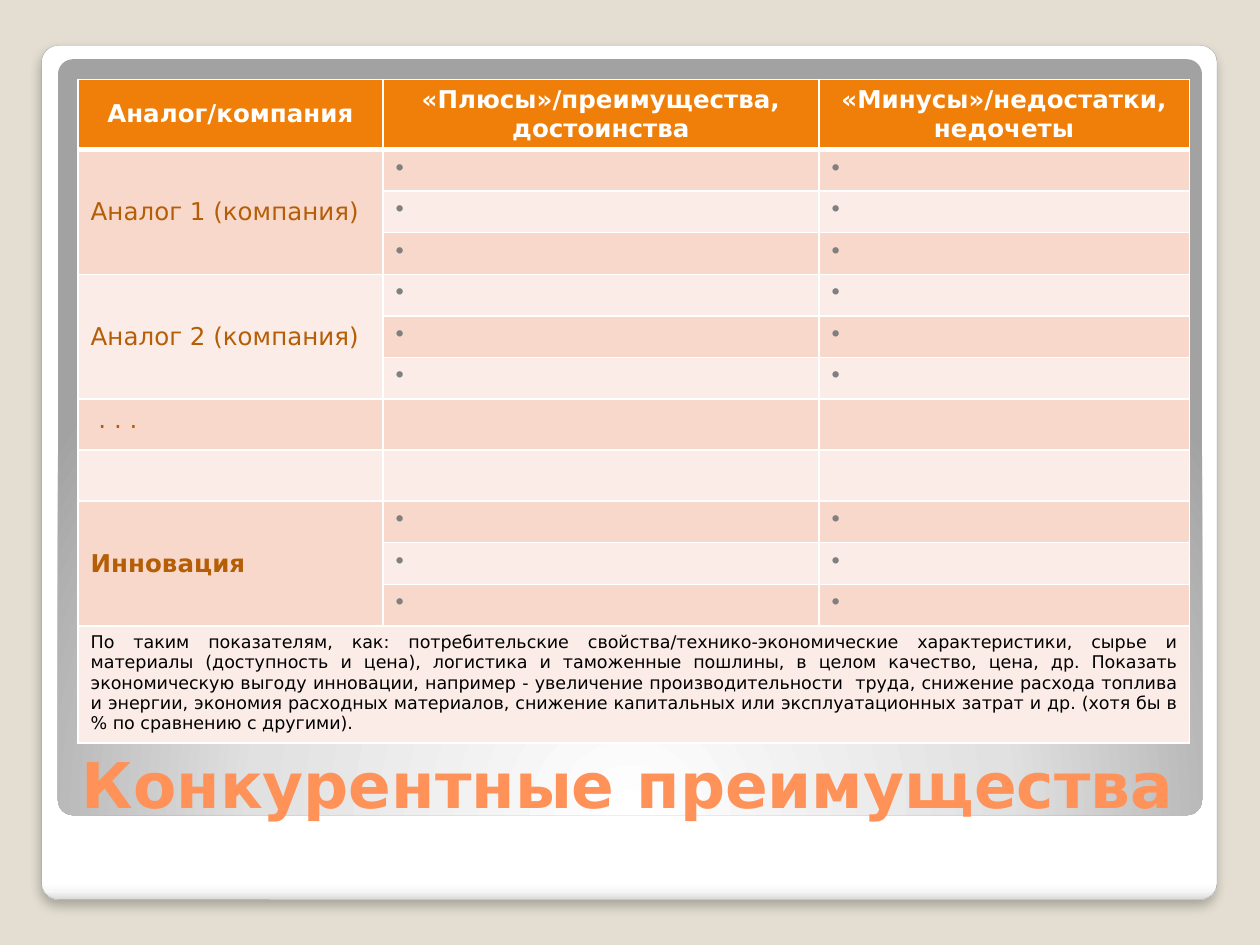
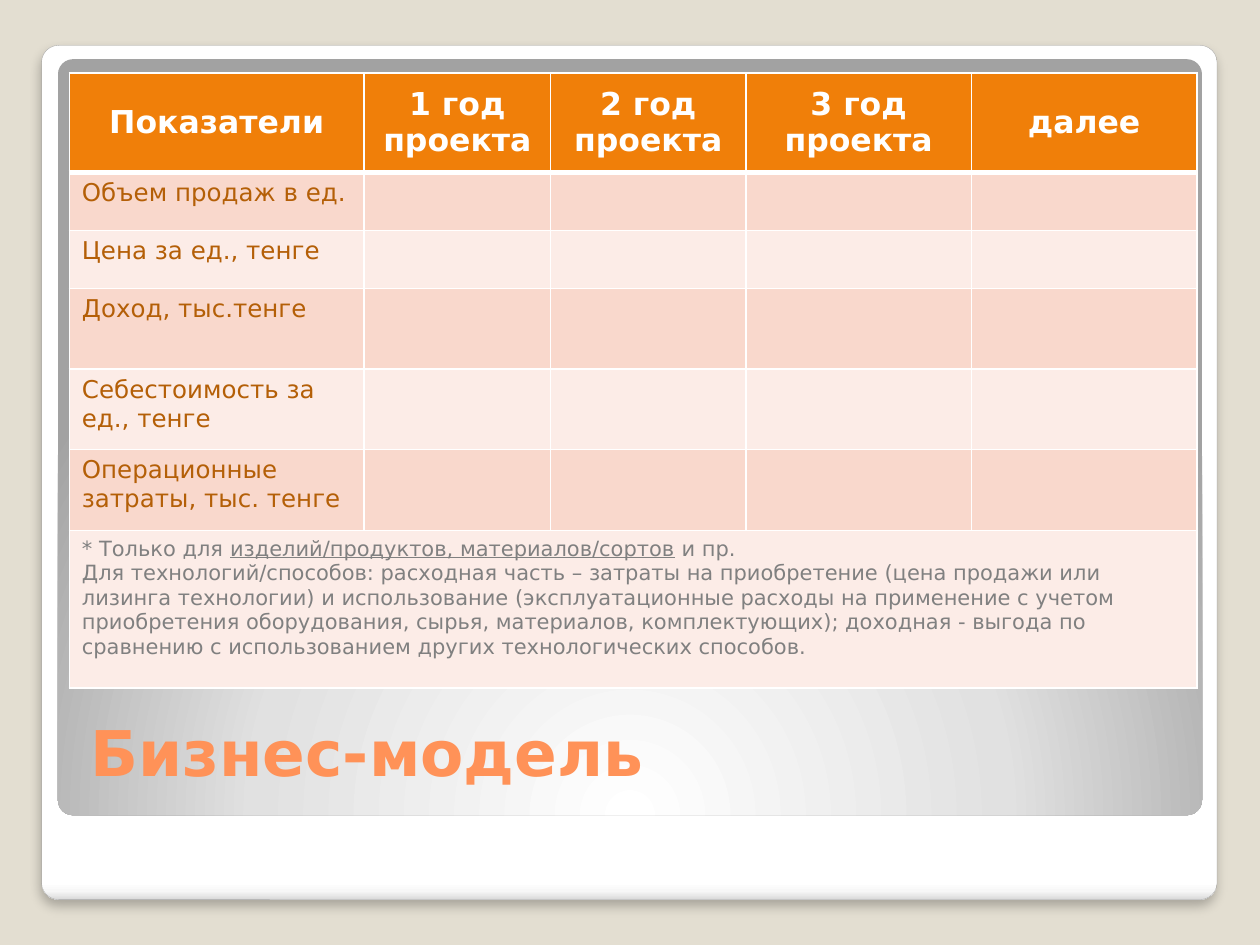
from lxml import etree
from pptx import Presentation
from pptx.dml.color import RGBColor
from pptx.enum.shapes import MSO_SHAPE
from pptx.enum.text import MSO_ANCHOR, MSO_AUTO_SIZE, PP_ALIGN
from pptx.oxml import parse_xml
from pptx.oxml.ns import nsdecls, qn
from pptx.util import Inches, Pt

ROUNDED = MSO_SHAPE.ROUNDED_RECTANGLE
TOP, MIDDLE, BOTTOM = MSO_ANCHOR.TOP, MSO_ANCHOR.MIDDLE, MSO_ANCHOR.BOTTOM
LEFT, CENTER, JUSTIFY = PP_ALIGN.LEFT, PP_ALIGN.CENTER, PP_ALIGN.JUSTIFY
NO_AUTOFIT = MSO_AUTO_SIZE.NONE

FONT = "DejaVu Sans"
WHITE = RGBColor(0xFF, 0xFF, 0xFF)
BLACK = RGBColor(0x00, 0x00, 0x00)
GRAY = RGBColor(0x80, 0x80, 0x80)
BEIGE = RGBColor(0xE3, 0xDE, 0xD1)
EDGE = RGBColor(0xA4, 0xA4, 0xA4)
TITLE_ORANGE = RGBColor(0xFF, 0x92, 0x58)
HEADER_ORANGE = RGBColor(0xF0, 0x7F, 0x09)
LABEL_BROWN = RGBColor(0xB4, 0x5F, 0x07)
BANDS = RGBColor(0xF9, 0xD8, 0xCC), RGBColor(0xFC, 0xEC, 0xE7)

CARD_STOPS = [(0, WHITE), (98, WHITE), (99, RGBColor(0xF7, 0xF7, 0xF7)),
              (100, RGBColor(0xDA, 0xDA, 0xDA))]
PANEL_STOPS = [(0, WHITE), (55, RGBColor(0xE1, 0xE1, 0xE1)),
               (100, RGBColor(0xA2, 0xA2, 0xA2))]
DOWNWARD = '<a:lin ang="5400000" scaled="0"/>'
FROM_BELOW = ('<a:path path="circle"><a:fillToRect l="50000" t="175000" '
              'r="50000" b="-75000"/></a:path>')

COMPETITORS = ["Аналог 1 (компания)", "Аналог 2 (компания)"]
INNOVATION = "Инновация"
COMPARISON_NOTE = (
    "По таким показателям, как: потребительские свойства/технико-экономические "
    "характеристики, сырье и материалы (доступность и цена), логистика и таможенные "
    "пошлины, в целом качество, цена, др. Показать экономическую выгоду инновации, "
    "например - увеличение производительности  труда, снижение расхода топлива и "
    "энергии, экономия расходных материалов, снижение капитальных или "
    "эксплуатационных затрат и др. (хотя бы в % по сравнению с другими).")
INDICATORS = ["Объем продаж в ед.", "Цена за ед., тенге", "Доход, тыс.тенге",
              "Себестоимость за ед., тенге", "Операционные затраты, тыс. тенге"]
MODEL_NOTE = [
    "* Только для ",
    "изделий/продуктов, материалов/сортов",
    " и пр.",
    "Для технологий/способов: расходная часть – затраты на приобретение (цена продажи "
    "или лизинга технологии) и использование (эксплуатационные расходы на применение с "
    "учетом приобретения оборудования, сырья, материалов, комплектующих); доходная - "
    "выгода по сравнению с использованием других технологических способов."]


def style_run(r, size, color, bold=False):
    r.font.name, r.font.size, r.font.bold = FONT, Pt(size), bold
    r.font.color.rgb = color


def add_rounded(slide, box, stops, direction):
    """Rounded rectangle with a gradient fill and no line or shadow."""
    sp = slide.shapes.add_shape(ROUNDED, *map(Inches, box))
    sp.adjustments[0] = 0.02
    sp.shadow.inherit = False
    sp.line.fill.background()
    sp.fill.background()
    gs = "".join(f'<a:gs pos="{pos * 1000}"><a:srgbClr val="{color}"/></a:gs>'
                 for pos, color in stops)
    gradient = parse_xml(f'<a:gradFill {nsdecls("a")} rotWithShape="1">'
                         f'<a:gsLst>{gs}</a:gsLst>{direction}</a:gradFill>')
    props = sp.element.spPr
    props.replace(props.find(qn("a:noFill")), gradient)
    return sp


def add_shared_frame(prs, layout, slide):
    """Give the layout the background, the white card and the gray panel."""
    fill = prs.slide_master.background.fill
    fill.solid()
    fill.fore_color.rgb = BEIGE
    card = add_rounded(slide, (0.33, 0.36, 9.33, 6.78), CARD_STOPS, DOWNWARD)
    card.line.color.rgb = EDGE
    card.line.width = Pt(0.16)
    card.element.spPr.find(qn("a:effectLst")).append(parse_xml(
        f'<a:outerShdw {nsdecls("a")} blurRad="{Pt(6)}" dist="{Pt(4)}" dir="5400000" '
        'algn="t" rotWithShape="0"><a:srgbClr val="000000"><a:alpha val="25000"/>'
        '</a:srgbClr></a:outerShdw>'))
    panel = add_rounded(slide, (0.46, 0.47, 9.08, 6), PANEL_STOPS, FROM_BELOW)
    for position, sp in enumerate((card, panel), start=2):
        layout.shapes.element.insert(position, sp.element)


def set_title(slide, text, box):
    title = slide.shapes.title
    title.left, title.top, title.width, title.height = map(Inches, box)
    tf = title.text_frame
    tf.text = text
    tf.auto_size = NO_AUTOFIT
    tf.vertical_anchor = BOTTOM
    p = tf.paragraphs[0]
    p.alignment = LEFT
    style_run(p.runs[0], 36, TITLE_ORANGE, bold=True)


def set_border(cell, **widths):
    """White lines in points on the sides L, R, T and B, 1 pt unless given."""
    props = cell._tc.get_or_add_tcPr()
    for i, side in enumerate("LRTB"):
        ln = etree.Element(qn(f"a:ln{side}"), w=str(Pt(widths.get(side, 1))))
        solid = etree.SubElement(ln, qn("a:solidFill"))
        etree.SubElement(solid, qn("a:srgbClr"), val=str(WHITE))
        props.insert(i, ln)


def write_cell(cell, text, size, color, bold=False, align=LEFT, anchor=TOP):
    cell.text_frame.text = text
    cell.vertical_anchor = anchor
    for p in cell.text_frame.paragraphs:
        p.alignment = align
        for r in p.runs:
            style_run(r, size, color, bold)


def write_bullet(cell):
    write_cell(cell, " ", 14, GRAY)
    props = cell.text_frame.paragraphs[0]._p.get_or_add_pPr()
    props.set("marL", str(Inches(0.2)))
    props.set("indent", str(Inches(-0.2)))
    etree.SubElement(props, qn("a:buChar"), char="•")


def add_banded_table(slide, left, top, widths, heights, headers, header_size):
    """Table with a header row, alternating bands and a full-width last row."""
    table = slide.shapes.add_table(
        len(heights), len(widths), Inches(left), Inches(top),
        Inches(sum(widths)), Inches(sum(heights))).table
    table.first_row = table.horz_banding = False
    for column, width in zip(table.columns, widths):
        column.width = Inches(width)
    for i, (row, height) in enumerate(zip(table.rows, heights)):
        row.height = Inches(height)
        for cell in row.cells:
            cell.fill.solid()
            cell.fill.fore_color.rgb = BANDS[(i - 1) % 2] if i else HEADER_ORANGE
            set_border(cell, **({"B": 3} if i == 0 else {"T": 3} if i == 1 else {}))
    for cell, text in zip(table.rows[0].cells, headers):
        write_cell(cell, text, header_size, WHITE, True, CENTER, MIDDLE)
    last = len(heights) - 1
    table.cell(last, 0).merge(table.cell(last, len(widths) - 1))
    return table


def build_advantages(slide):
    set_title(slide, "Конкурентные преимущества", (0.55, 5.63, 8.95, 0.94))
    table = add_banded_table(
        slide, 0.62, 0.63, [2.42, 3.46, 2.94],
        [0.55] + [0.33] * 6 + [0.39] * 2 + [0.33] * 3 + [0.93],
        ["Аналог/компания", "«Плюсы»/преимущества, достоинства",
         "«Минусы»/недостатки, недочеты"], 14)
    for first, label in zip((1, 4, 9), COMPETITORS + [INNOVATION]):
        table.cell(first, 0).merge(table.cell(first + 2, 0))
        write_cell(table.cell(first, 0), label, 14, LABEL_BROWN,
                   bold=label == INNOVATION, anchor=MIDDLE)
        for row in range(first, first + 3):
            for column in (1, 2):
                write_bullet(table.cell(row, column))
    write_cell(table.cell(7, 0), " . . .", 14, LABEL_BROWN)
    write_cell(table.cell(12, 0), COMPARISON_NOTE, 10, BLACK, align=JUSTIFY)


def build_business_model(slide):
    set_title(slide, "Бизнес-модель", (0.62, 5.16, 8.95, 1.15))
    years = [f"{year} год проекта" for year in (1, 2, 3)]
    table = add_banded_table(
        slide, 0.55, 0.58, [2.34, 1.48, 1.55, 1.79, 1.79],
        [0.79] + [0.46] * 2 + [0.64] * 3 + [1.25],
        ["Показатели", *years, "далее"], 18)
    for row, label in enumerate(INDICATORS, start=1):
        write_cell(table.cell(row, 0), label, 14, LABEL_BROWN)
    before, underlined, after, technologies = MODEL_NOTE
    note = table.cell(6, 0)
    write_cell(note, f"{before}\n{technologies}", 12, GRAY)
    p = note.text_frame.paragraphs[0]
    for text in (underlined, after):
        r = p.add_run()
        r.text = text
        style_run(r, 12, GRAY)
        r.font.underline = text == underlined


def main():
    prs = Presentation()
    prs.slide_width, prs.slide_height = Inches(10), Inches(7.5)
    layout = prs.slide_layouts.get_by_name("Title Only")
    advantages, model = (prs.slides.add_slide(layout) for _ in range(2))
    add_shared_frame(prs, layout, advantages)
    build_advantages(advantages)
    build_business_model(model)
    prs.save("out.pptx")


if __name__ == "__main__":
    main()
